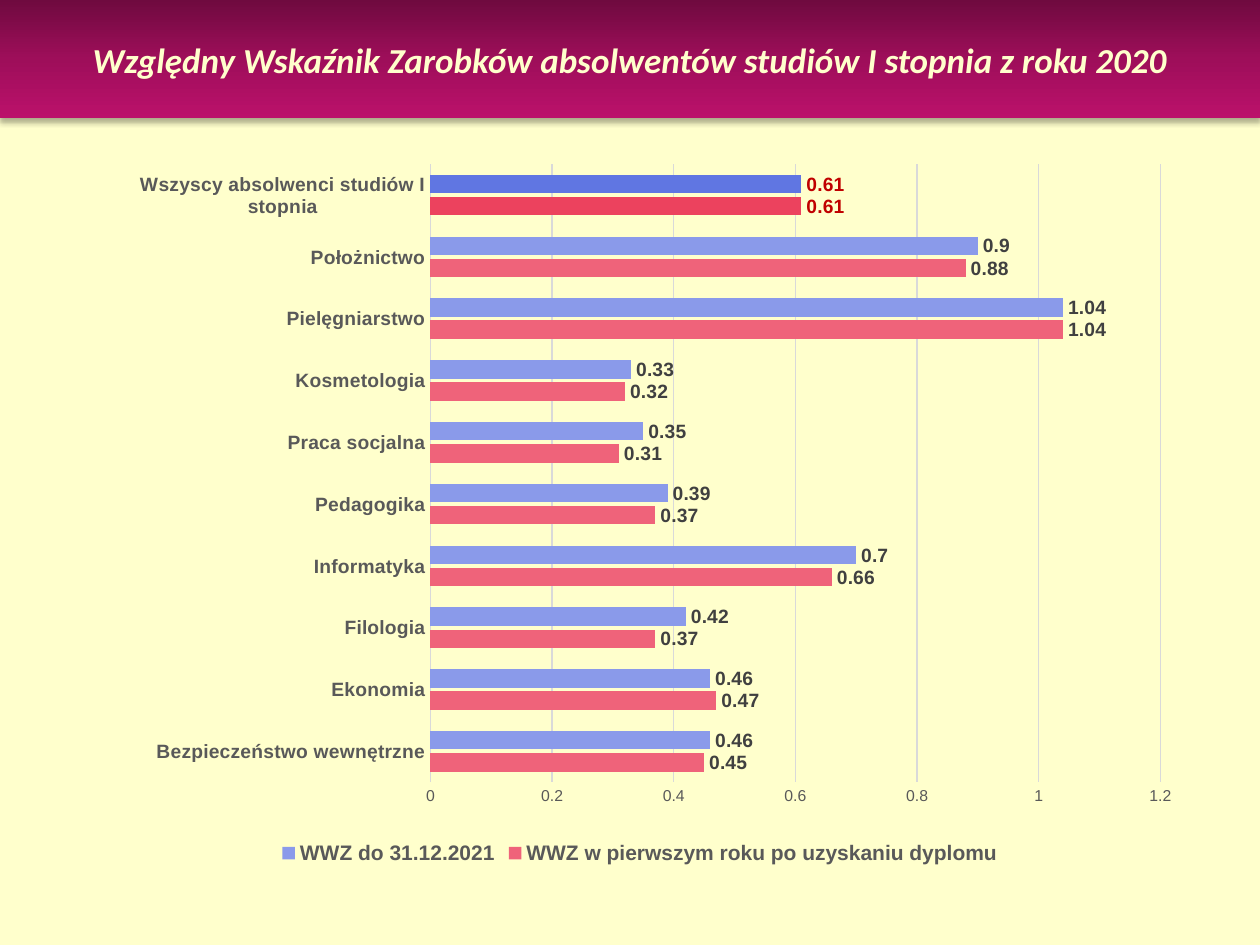
from lxml import etree
from pptx import Presentation
from pptx.chart.data import CategoryChartData
from pptx.dml.color import RGBColor
from pptx.enum.chart import XL_CHART_TYPE, XL_LABEL_POSITION, XL_LEGEND_POSITION, XL_TICK_MARK
from pptx.enum.shapes import MSO_SHAPE
from pptx.enum.text import MSO_ANCHOR, PP_ALIGN
from pptx.oxml import parse_xml
from pptx.oxml.ns import nsdecls, qn
from pptx.util import Inches, Pt

CREAM = RGBColor(0xFF, 0xFF, 0xCC)
BLACK = RGBColor(0x00, 0x00, 0x00)
GREY = RGBColor(0x59, 0x59, 0x59)
DARK_GREY = RGBColor(0x40, 0x40, 0x40)
LINE_GREY = RGBColor(0xD9, 0xD9, 0xD9)
DARK_RED = RGBColor(0xC0, 0x00, 0x00)
PINK = RGBColor(0xEF, 0x63, 0x7A)
STRONG_PINK = RGBColor(0xEC, 0x42, 0x5E)
BLUE = RGBColor(0x8A, 0x9A, 0xEA)
STRONG_BLUE = RGBColor(0x60, 0x76, 0xE2)
BANNER_STOPS = (
    (0, RGBColor(0x6F, 0x0A, 0x3F)),
    (50, RGBColor(0x9E, 0x0E, 0x5A)),
    (100, RGBColor(0xBB, 0x11, 0x6B)),
)

RECTANGLE = MSO_SHAPE.RECTANGLE
BAR_CHART = XL_CHART_TYPE.BAR_CLUSTERED
OUTSIDE_END = XL_LABEL_POSITION.OUTSIDE_END
LEGEND_BOTTOM = XL_LEGEND_POSITION.BOTTOM
NO_TICK = XL_TICK_MARK.NONE
MIDDLE = MSO_ANCHOR.MIDDLE
CENTER = PP_ALIGN.CENTER

CATEGORIES = (
    "Bezpieczeństwo wewnętrzne", "Ekonomia", "Filologia", "Informatyka", "Pedagogika",
    "Praca socjalna", "Kosmetologia", "Pielęgniarstwo", "Położnictwo",
    "Wszyscy absolwenci studiów I stopnia",
)
# Name, values, bar colour, colour of the bar for all graduates
SERIES = (
    ("WWZ w pierwszym roku po uzyskaniu dyplomu",
     (0.45, 0.47, 0.37, 0.66, 0.37, 0.31, 0.32, 1.04, 0.88, 0.61), PINK, STRONG_PINK),
    ("WWZ do 31.12.2021",
     (0.46, 0.46, 0.42, 0.7, 0.39, 0.35, 0.33, 1.04, 0.9, 0.61), BLUE, STRONG_BLUE),
)


class SlideBuilder:
    """Holds the style and the current slide; places are shares of its size."""

    title_font = "Calibri"
    chart_font = "Arial"

    def __init__(self, deck):
        self.width, self.height = deck.slide_width, deck.slide_height
        self.page = deck.slides.add_slide(deck.slide_layouts[6])
        self.page.background.fill.solid()
        self.page.background.fill.fore_color.rgb = CREAM

    def area(self, left, top, width, height):
        return (int(left * self.width), int(top * self.height),
                int(width * self.width), int(height * self.height))

    def style_font(self, font, size, color, bold=False, name=None):
        font.name = name or self.chart_font
        font.size = Pt(size)
        font.bold = bold
        font.color.rgb = color

    def banner(self, text, place, stops):
        box = self.page.shapes.add_shape(RECTANGLE, *self.area(*place))
        box.line.fill.background()

        # Gradient running from top to bottom
        box.fill.gradient()
        box.fill.gradient_angle = 270
        stop_list = box._element.spPr.find(".//" + qn("a:gsLst"))
        for old_stop in list(stop_list):
            stop_list.remove(old_stop)
        for percent, color in stops:
            stop = etree.SubElement(stop_list, qn("a:gs"), pos=str(percent * 1000))
            etree.SubElement(stop, qn("a:srgbClr"), val=str(color))

        # Soft shadow below
        box.shadow.inherit = False
        box._element.spPr.find(qn("a:effectLst")).append(parse_xml(
            f'<a:outerShdw {nsdecls("a")} blurRad="{Pt(3.5)}" dist="{Pt(2.2)}" '
            'dir="5400000" rotWithShape="0"><a:srgbClr val="000000">'
            '<a:alpha val="32000"/></a:srgbClr></a:outerShdw>'))

        frame = box.text_frame
        frame.word_wrap = True
        frame.vertical_anchor = MIDDLE
        para = frame.paragraphs[0]
        para.text = text
        para.alignment = CENTER
        self.style_font(para.font, 20, CREAM, True, self.title_font)
        para.font.italic = True

    def bar_chart(self, categories, series_rows, place, plot_place):
        data = CategoryChartData()
        data.categories = categories
        for name, values, *_ in series_rows:
            data.add_series(name, values)
        chart = self.page.shapes.add_chart(BAR_CHART, *self.area(*place), data).chart
        chart.has_title = False
        self.style_font(chart.font, 10, BLACK)
        self.place_plot(chart, plot_place)
        self.style_axes(chart)

        chart.has_legend = True
        chart.legend.position = LEGEND_BOTTOM
        chart.legend.include_in_layout = False
        self.style_font(chart.legend.font, 12, GREY, True)

        plot = chart.plots[0]
        plot.vary_by_categories = False
        plot.gap_width = 115
        plot.overlap = -20
        for series, (_, values, color, accent) in zip(plot.series, series_rows):
            self.style_series(series, color, accent, len(values) - 1)

    def place_plot(self, chart, plot_place):
        plot_area = chart._chartSpace.find(".//" + qn("c:plotArea"))
        for old_layout in plot_area.findall(qn("c:layout")):
            plot_area.remove(old_layout)
        layout = etree.Element(qn("c:layout"))
        manual = etree.SubElement(layout, qn("c:manualLayout"))
        settings = [("layoutTarget", "inner"), ("xMode", "edge"), ("yMode", "edge")]
        settings += zip("xywh", plot_place)
        for tag, value in settings:
            etree.SubElement(manual, qn("c:" + tag), val=str(value))
        plot_area.insert(0, layout)

    def style_axes(self, chart):
        names, scale = chart.category_axis, chart.value_axis
        for axis, size, bold in ((names, 11, True), (scale, 9, False)):
            axis.major_tick_mark = axis.minor_tick_mark = NO_TICK
            self.style_font(axis.tick_labels.font, size, GREY, bold)
        scale.minimum_scale, scale.maximum_scale, scale.major_unit = 0, 1.2, 0.2
        scale.format.line.fill.background()
        scale.has_major_gridlines = True
        for line, weight in ((names.format.line, 1),
                             (scale.major_gridlines.format.line, 0.75)):
            line.color.rgb = LINE_GREY
            line.width = Pt(weight)

    def style_series(self, series, color, accent, accent_index):
        series.invert_if_negative = False
        point = series.points[accent_index]
        for bar, bar_color in ((series, color), (point, accent)):
            bar.format.fill.solid()
            bar.format.fill.fore_color.rgb = bar_color
        labels = series.data_labels
        labels.show_value = True
        for label, label_color in ((labels, DARK_GREY), (point.data_label, DARK_RED)):
            self.style_font(label.font, 11, label_color, True)
            label.position = OUTSIDE_END


def main():
    deck = Presentation()
    deck.slide_width, deck.slide_height = Inches(10), Inches(7.5)
    builder = SlideBuilder(deck)

    # Earnings by field of study
    builder.bar_chart(CATEGORIES, SERIES, (0.075, 0.153, 0.866, 0.767),
                      (0.308, 0.027, 0.669, 0.853))

    # Title banner
    builder.banner("Względny Wskaźnik Zarobków absolwentów studiów I stopnia z roku 2020",
                   (0, 0, 1, 0.125), BANNER_STOPS)

    deck.save("out.pptx")


if __name__ == "__main__":
    main()
